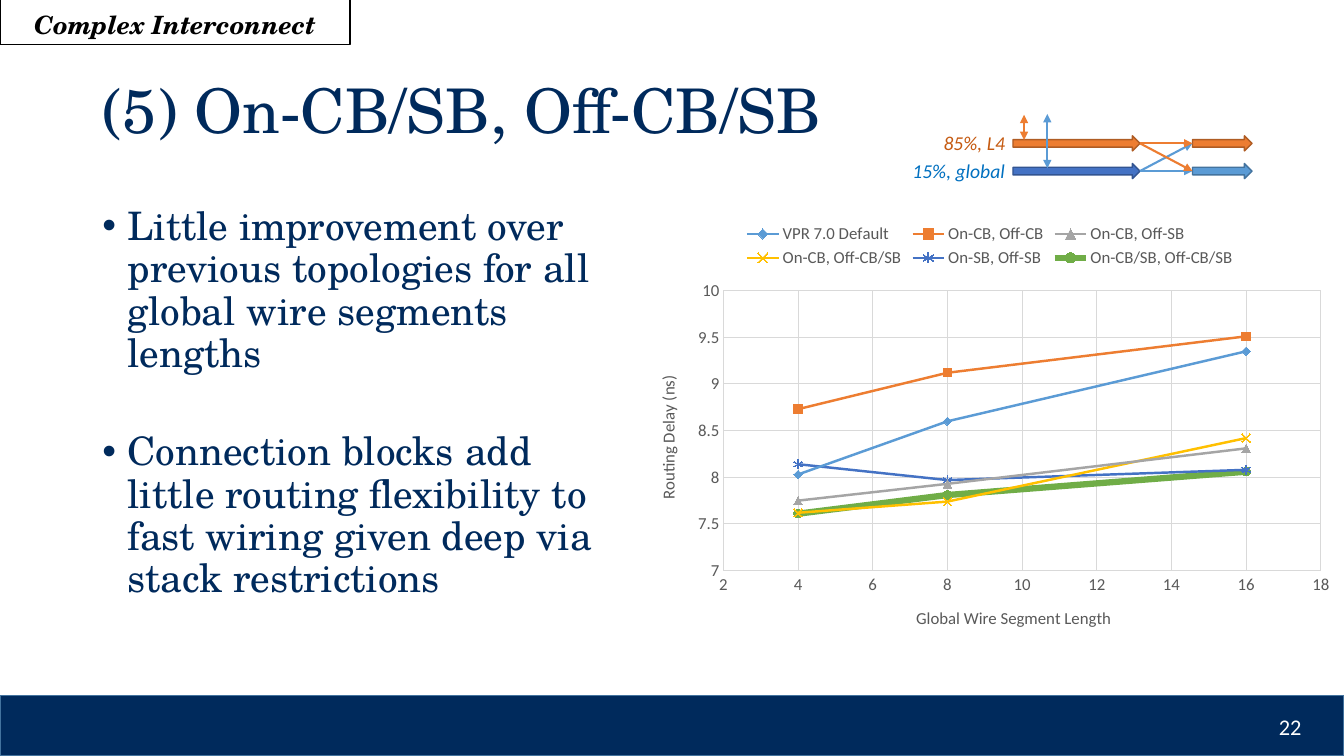
"""Build the slide on combined on/off connection-block and switch-block routing."""
from typing import Any, NamedTuple, Optional

from lxml.etree import SubElement
from pptx import Presentation
from pptx.chart.data import XyChartData
from pptx.dml.color import RGBColor
from pptx.enum.chart import XL_CHART_TYPE, XL_LEGEND_POSITION, XL_MARKER_STYLE, XL_TICK_MARK
from pptx.enum.shapes import MSO_CONNECTOR, MSO_SHAPE
from pptx.enum.text import MSO_ANCHOR, MSO_AUTO_SIZE, PP_ALIGN
from pptx.oxml.ns import qn
from pptx.util import Pt

NAVY = RGBColor(0x00, 0x2A, 0x5C)
WHITE = RGBColor(0xFF, 0xFF, 0xFF)
BLACK = RGBColor(0x00, 0x00, 0x00)
BLUE = RGBColor(0x5B, 0x9B, 0xD5)
BLUE_EDGE = RGBColor(0x43, 0x73, 0x9E)
ORANGE = RGBColor(0xED, 0x7D, 0x31)
ORANGE_EDGE = RGBColor(0xAF, 0x5C, 0x24)
ORANGE_TEXT = RGBColor(0xC5, 0x5A, 0x11)
BLUE_TEXT = RGBColor(0x00, 0x70, 0xC0)
INDIGO = RGBColor(0x44, 0x72, 0xC4)
INDIGO_EDGE = RGBColor(0x32, 0x54, 0x91)
GRAY = RGBColor(0xA5, 0xA5, 0xA5)
GOLD = RGBColor(0xFF, 0xC0, 0x00)
GREEN = RGBColor(0x70, 0xAD, 0x47)
AXIS_TEXT = RGBColor(0x59, 0x59, 0x59)
GRID = RGBColor(0xD9, 0xD9, 0xD9)
SERIF = "TeX Gyre Schola"
SANS = "Calibri"


class Box(NamedTuple):
    left: float
    top: float
    width: float
    height: float


class Block(NamedTuple):
    preset: MSO_SHAPE
    box: Box
    edge: RGBColor
    fill: Optional[RGBColor] = None


class Wire(NamedTuple):
    start: tuple[float, float]
    end: tuple[float, float]
    color: RGBColor
    weight: float = 1.5
    both_ends: bool = False


class Label(NamedTuple):
    text: str
    box: Box
    color: RGBColor
    size: float
    font: str = SANS
    align: PP_ALIGN = PP_ALIGN.RIGHT
    bold: bool = False
    italic: bool = True
    inset: float = 7.2


class Topology(NamedTuple):
    title: str
    delays: tuple[float, ...]
    color: RGBColor
    marker: XL_MARKER_STYLE
    weight: float = 1.75
    hollow: bool = False


LENGTHS = (4, 8, 16)
TOPOLOGIES = (
    Topology("VPR 7.0 Default", (8.03, 8.6, 9.35), BLUE, XL_MARKER_STYLE.DIAMOND),
    Topology("On-CB, Off-CB", (8.73, 9.12, 9.51), ORANGE, XL_MARKER_STYLE.SQUARE),
    Topology("On-CB, Off-SB", (7.75, 7.93, 8.31), GRAY, XL_MARKER_STYLE.TRIANGLE),
    Topology("On-CB, Off-CB/SB", (7.62, 7.74, 8.42), GOLD, XL_MARKER_STYLE.X, hollow=True),
    Topology("On-SB, Off-SB", (8.14, 7.97, 8.08), INDIGO, XL_MARKER_STYLE.STAR, hollow=True),
    Topology("On-CB/SB, Off-CB/SB", (7.61, 7.81, 8.06), GREEN, XL_MARKER_STYLE.CIRCLE, 4.5),
)

FOOTER = Block(MSO_SHAPE.RECTANGLE, Box(0, 496.8, 960, 43.2), BLUE_EDGE, NAVY)
SECTION_FRAME = Block(MSO_SHAPE.RECTANGLE, Box(0, -0.5, 250, 32.4), BLACK)
LOCAL_Y, GLOBAL_Y = 102.4, 122.2
WIRE_X, CROSS_X, NEXT_X = 723.6, 814.3, 851.8
SEGMENTS = tuple(
    Block(MSO_SHAPE.RIGHT_ARROW, Box(left, middle - 5.4, width, 10.8), edge, fill)
    for left, middle, width, edge, fill in (
        (WIRE_X, LOCAL_Y, 90.7, ORANGE_EDGE, ORANGE),
        (NEXT_X, LOCAL_Y, 42.5, ORANGE_EDGE, ORANGE),
        (WIRE_X, GLOBAL_Y, 90.7, INDIGO_EDGE, INDIGO),
        (NEXT_X, GLOBAL_Y, 42.5, BLUE_EDGE, BLUE),
    )
)
SWITCHES = tuple(
    Wire((CROSS_X, start), (NEXT_X, end), color)
    for start, color in ((GLOBAL_Y, BLUE), (LOCAL_Y, ORANGE))
    for end in (GLOBAL_Y, LOCAL_Y)
)
TAPS = (
    Wire((731.5, 82), (731.5, 100), ORANGE, 1, True),
    Wire((748.1, 81.4), (748.1, 120.2), BLUE, 1.5, True),
)
LABELS = (
    Label("22", Box(720.7, 504.7, 216, 28.8), WHITE, 16, italic=False),
    Label("Complex Interconnect", Box(7.2, 2.9, 301.7, 28.8), BLACK, 18, SERIF,
          PP_ALIGN.LEFT, True, inset=17.1),
    Label("85%, L4", Box(615.6, 89.6, 109.4, 24.2), ORANGE_TEXT, 14),
    Label("15%, global", Box(615.6, 109.9, 109.4, 24.2), BLUE_TEXT, 14),
)


def apply_format(target: Any, values: dict[str, Any]) -> None:
    for attribute, value in values.items():
        setattr(target, attribute, value)


def style_font(font: Any, size: float, color: RGBColor, name: str = SANS,
               bold: bool = False, italic: bool = False) -> None:
    apply_format(font, {"size": Pt(size), "name": name, "bold": bold, "italic": italic})
    font.color.rgb = color


def style_line(line: Any, color: RGBColor, weight: float) -> None:
    line.color.rgb = color
    line.width = Pt(weight)


def style_fill(fill: Any, color: Optional[RGBColor]) -> None:
    if color is None:
        fill.background()
    else:
        fill.solid()
        fill.fore_color.rgb = color


def draw_block(slide: Any, block: Block) -> None:
    shape = slide.shapes.add_shape(block.preset, *map(Pt, block.box))
    shape.shadow.inherit = False
    style_fill(shape.fill, block.fill)
    style_line(shape.line, block.edge, 1)


def draw_wire(slide: Any, wire: Wire) -> None:
    connector = slide.shapes.add_connector(
        MSO_CONNECTOR.STRAIGHT, *map(Pt, wire.start + wire.end))
    style_line(connector.line, wire.color, wire.weight)
    outline = connector.line._get_or_add_ln()
    for end in ("a:headEnd", "a:tailEnd") if wire.both_ends else ("a:tailEnd",):
        SubElement(outline, qn(end), type="triangle")
    SubElement(connector._element.spPr, qn("a:effectLst"))


def draw_label(slide: Any, label: Label) -> None:
    frame = slide.shapes.add_textbox(*map(Pt, label.box)).text_frame
    apply_format(frame, {"word_wrap": True, "text": label.text, "margin_left": Pt(label.inset),
                         "vertical_anchor": MSO_ANCHOR.MIDDLE})
    line = frame.paragraphs[0]
    line.alignment = label.align
    style_font(line.runs[0].font, label.size, label.color, label.font, label.bold, label.italic)


def fill_placeholder(holder: Any, box: Box, size: float, texts: tuple[str, ...],
                     anchor: MSO_ANCHOR, gap: float = 0, hang: float = 0) -> None:
    apply_format(holder, dict(zip(box._fields, map(Pt, box))))
    frame = holder.text_frame
    apply_format(frame, {"text": "\n".join(texts), "word_wrap": True,
                         "auto_size": MSO_AUTO_SIZE.NONE, "vertical_anchor": anchor})
    for position, entry in enumerate(frame.paragraphs):
        apply_format(entry, {"alignment": PP_ALIGN.LEFT, "line_spacing": 0.9,
                             "space_before": Pt(gap if position else 0)})
        for side, indent in (("marL", hang), ("indent", -hang)):
            entry._p.get_or_add_pPr().set(side, str(int(Pt(indent))))
        style_font(entry.runs[0].font, size, NAVY, SERIF)


def style_axis(axis: Any, title: str, low: float, high: float, step: float) -> None:
    apply_format(axis, {"minimum_scale": low, "maximum_scale": high, "major_unit": step,
                        "has_major_gridlines": True, "major_tick_mark": XL_TICK_MARK.NONE,
                        "minor_tick_mark": XL_TICK_MARK.NONE})
    for line in (axis.format.line, axis.major_gridlines.format.line):
        style_line(line, GRID, 0.75)
    style_font(axis.tick_labels.font, 12, AXIS_TEXT)
    apply_format(axis.tick_labels, {"number_format": "General", "number_format_is_linked": False})
    caption = axis.axis_title.text_frame
    caption.text = title
    style_font(caption.paragraphs[0].runs[0].font, 12, AXIS_TEXT)


def draw_delay_chart(slide: Any, box: Box) -> None:
    delays = XyChartData()
    for topology in TOPOLOGIES:
        points = delays.add_series(topology.title)
        for length, delay in zip(LENGTHS, topology.delays):
            points.add_data_point(length, delay)
    chart = slide.shapes.add_chart(XL_CHART_TYPE.XY_SCATTER_LINES, *map(Pt, box), delays).chart
    apply_format(chart, {"has_title": False, "has_legend": True})
    style_font(chart.font, 10, BLACK)
    apply_format(chart.legend, {"position": XL_LEGEND_POSITION.TOP, "include_in_layout": False})
    style_font(chart.legend.font, 12, AXIS_TEXT)
    style_axis(chart.category_axis, "Global Wire Segment Length", 2, 18, 2)
    style_axis(chart.value_axis, "Routing Delay (ns)", 7, 10, 0.5)
    chart.plots[0].vary_by_categories = False
    for series, topology in zip(chart.plots[0].series, TOPOLOGIES):
        series.smooth = False
        style_line(series.format.line, topology.color, topology.weight)
        apply_format(series.marker, {"style": topology.marker, "size": 6})
        style_line(series.marker.format.line, topology.color, 0.75)
        style_fill(series.marker.format.fill, None if topology.hollow else topology.color)


def main() -> None:
    deck = Presentation()
    apply_format(deck, {"slide_width": Pt(960), "slide_height": Pt(540)})
    slide = deck.slides.add_slide(deck.slide_layouts[1])
    fill_placeholder(slide.shapes.title, Box(66, 28.8, 828, 104.4), 44,
                     ("(5) On-CB/SB, Off-CB/SB",), MSO_ANCHOR.MIDDLE)
    fill_placeholder(slide.placeholders[1], Box(66, 144, 388.8, 342.7), 28, (
        "Little improvement over previous topologies for all global wire segments lengths",
        "Connection blocks add little routing flexibility to fast wiring given deep via "
        "stack restrictions"), MSO_ANCHOR.TOP, gap=40, hang=18)
    draw_delay_chart(slide, Box(454.3, 151.9, 505.4, 312.5))
    for block in (FOOTER, SECTION_FRAME) + SEGMENTS:
        draw_block(slide, block)
    for wire in SWITCHES + TAPS:
        draw_wire(slide, wire)
    for label in LABELS:
        draw_label(slide, label)
    deck.save("out.pptx")


if __name__ == "__main__":
    main()
